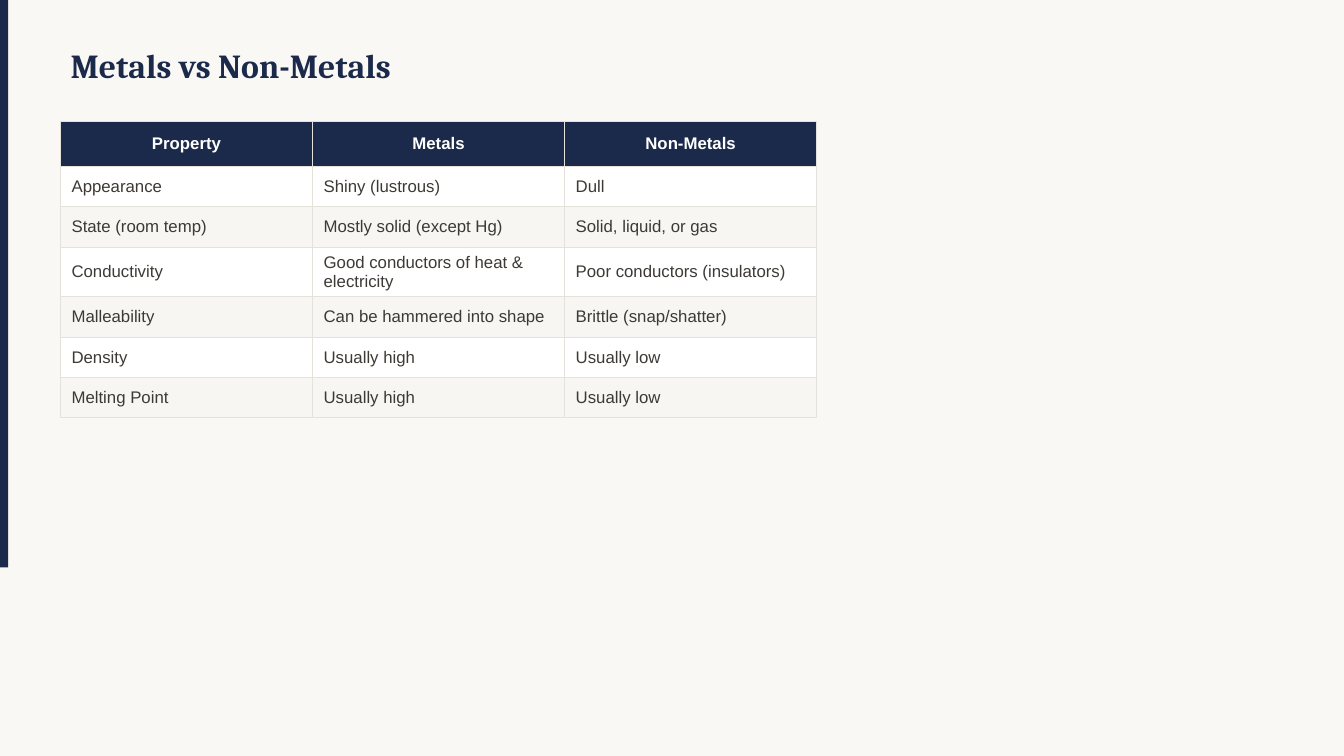
"""Build the slide that compares metals with non-metals in a table."""
from dataclasses import dataclass

from lxml.etree import SubElement as Sub
from pptx import Presentation
from pptx.dml.color import RGBColor as RGB
from pptx.enum.shapes import MSO_SHAPE as Shape
from pptx.enum.text import MSO_ANCHOR as Anchor, PP_ALIGN as Align
from pptx.oxml.ns import qn
from pptx.util import Inches, Pt

TITLE = "Metals vs Non-Metals"
ROWS = [
    ("Property", "Metals", "Non-Metals"),
    ("Appearance", "Shiny (lustrous)", "Dull"),
    ("State (room temp)", "Mostly solid (except Hg)", "Solid, liquid, or gas"),
    ("Conductivity", "Good conductors of heat & electricity", "Poor conductors (insulators)"),
    ("Malleability", "Can be hammered into shape", "Brittle (snap/shatter)"),
    ("Density", "Usually high", "Usually low"),
    ("Melting Point", "Usually high", "Usually low"),
]


@dataclass(frozen=True)
class Theme:
    back: str = "FAF8F5"
    navy: str = "1B2A4A"
    white: str = "FFFFFF"
    band: str = "F8F6F3"
    ink: str = "3D3A36"
    rule: str = "E5E2DC"
    serif: str = "Cambria"
    sans: str = "Arial"
    head: int = 24
    body: int = 12
    line: float = 0.5


LOOK = Theme()


def paint(fill, color):
    fill.solid()
    fill.fore_color.rgb = RGB.from_string(color)


def style(font, name, size, color, bold):
    font.name, font.size, font.bold = name, Pt(size), bold
    font.color.rgb = RGB.from_string(color)


def border(cell):
    props = cell._tc.get_or_add_tcPr()
    for side in ("lnL", "lnR", "lnT", "lnB"):
        line = Sub(props, qn(f"a:{side}"), w=str(Pt(LOOK.line)))
        Sub(Sub(line, qn("a:solidFill")), qn("a:srgbClr"), val=LOOK.rule)


def add_bar(slide):
    bar = slide.shapes.add_shape(Shape.RECTANGLE, 0, 0, Inches(0.08), Inches(5.63))
    bar.shadow.inherit = False
    paint(bar.fill, LOOK.navy)
    bar.line.fill.background()


def add_title(slide):
    title = slide.shapes.title
    title.left, title.top = Inches(0.6), Inches(0.3)
    title.width, title.height = Inches(10), Inches(0.7)
    frame = title.text_frame
    frame.text = TITLE
    frame.vertical_anchor = Anchor.MIDDLE
    para = frame.paragraphs[0]
    para.alignment = Align.LEFT
    style(para.font, LOOK.serif, LOOK.head, LOOK.navy, True)


def fill_cell(cell, text, row):
    top = row == 0
    cell.text = text
    cell.vertical_anchor = Anchor.MIDDLE
    cell.margin_left = cell.margin_right = Inches(0.11)
    cell.margin_top = cell.margin_bottom = Inches(0.06)
    border(cell)
    paint(cell.fill, LOOK.navy if top else LOOK.white if row % 2 else LOOK.band)
    para = cell.text_frame.paragraphs[0]
    para.alignment = Align.CENTER if top else Align.LEFT
    style(para.font, LOOK.sans, LOOK.body, LOOK.white if top else LOOK.ink, top)


def add_grid(slide):
    count, wide = len(ROWS), len(ROWS[0])
    grid = slide.shapes.add_table(
        count, wide, Inches(0.6), Inches(1.2), Inches(2.5 * wide), Inches(0.4 * count + 0.05)
    ).table
    for row, texts in enumerate(ROWS):
        grid.rows[row].height = Inches(0.4 if row else 0.45)
        for col, text in enumerate(texts):
            fill_cell(grid.cell(row, col), text, row)


def main():
    deck = Presentation()
    deck.slide_width, deck.slide_height = Inches(13.33), Inches(7.5)
    slide = deck.slides.add_slide(deck.slide_layouts.get_by_name("Title Only"))
    paint(slide.background.fill, LOOK.back)
    add_bar(slide)
    add_title(slide)
    add_grid(slide)
    deck.save("out.pptx")


if __name__ == "__main__":
    main()
